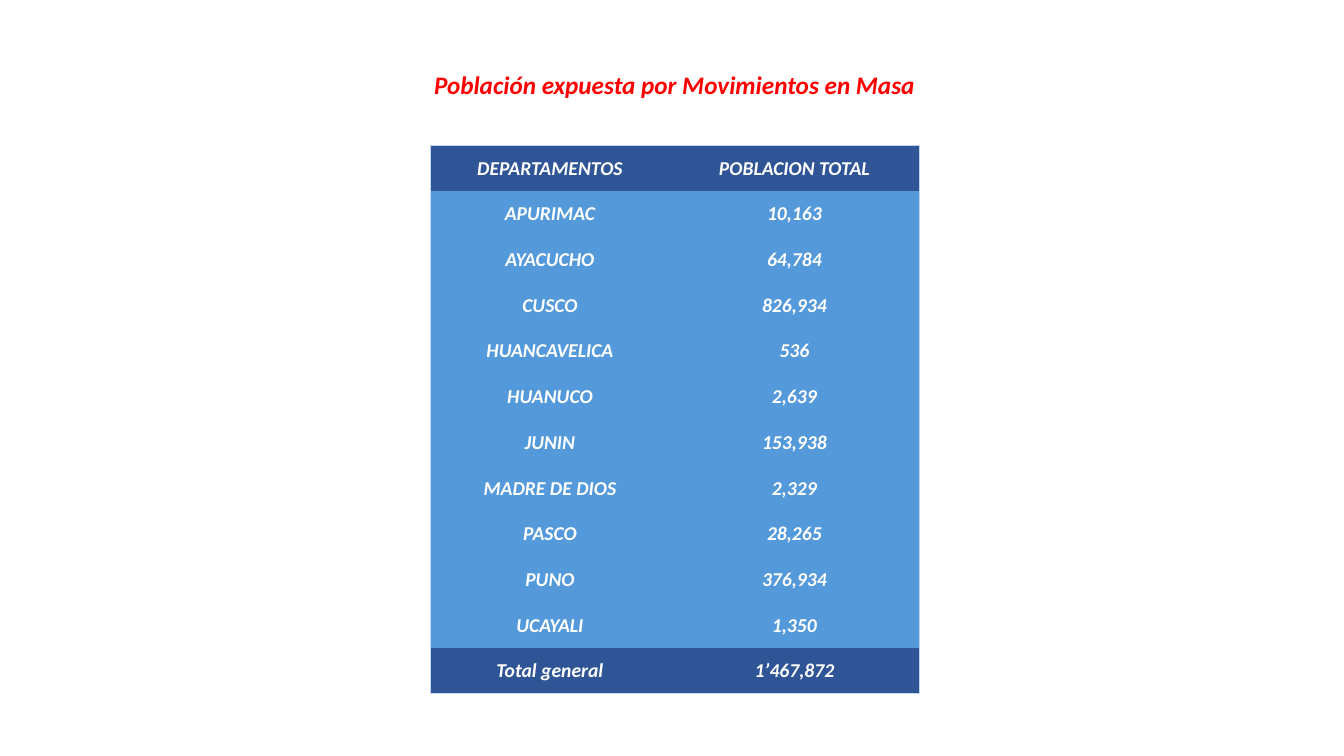
from pptx import Presentation
from pptx.dml.color import RGBColor
from pptx.enum.text import MSO_ANCHOR as Anchor, MSO_AUTO_SIZE as AutoSize, PP_ALIGN as Align
from pptx.oxml import parse_xml
from pptx.oxml.ns import nsdecls
from pptx.util import Emu, Pt

RED = RGBColor(0xFF, 0x00, 0x00)
WHITE = RGBColor(0xFF, 0xFF, 0xFF)
NAVY = RGBColor(0x2F, 0x55, 0x97)
BLUE = RGBColor(0x54, 0x99, 0xDA)
PALE = RGBColor(0xC4, 0xD5, 0xEB)
NO_GRID_STYLE = "{2D5ABB26-0587-4C30-8999-92F81FD0307C}"

ROWS = [
    ("DEPARTAMENTOS", "POBLACION TOTAL"),
    ("APURIMAC", "10,163"),
    ("AYACUCHO", "64,784"),
    ("CUSCO", "826,934"),
    ("HUANCAVELICA", "536"),
    ("HUANUCO", "2,639"),
    ("JUNIN", "153,938"),
    ("MADRE DE DIOS", "2,329"),
    ("PASCO", "28,265"),
    ("PUNO", "376,934"),
    ("UCAYALI", "1,350"),
    ("Total general", "1’467,872"),
]


def px(n):
    return Emu(round(n * 12192000 / 1344))


class Sheet:
    """Draws styled elements on the current slide."""

    def __init__(self, prs, font="Calibri"):
        self.s = prs.slides.add_slide(prs.slide_layouts[6])
        self.font = font

    def add_text(self, tf, text, size, color):
        p = tf.paragraphs[0]
        p.alignment = Align.CENTER
        r = p.add_run()
        r.text = text
        f = r.font
        f.name, f.size, f.bold, f.italic = self.font, Pt(size), True, True
        f.color.rgb = color

    def title(self, text, x, y, w, h):
        tf = self.s.shapes.add_textbox(px(x), px(y), px(w), px(h)).text_frame
        tf.word_wrap = False
        tf.auto_size = AutoSize.SHAPE_TO_FIT_TEXT
        self.add_text(tf, text, 18, RED)

    def border(self, cell, side):
        cell._tc.get_or_add_tcPr().append(parse_xml(
            f'<a:ln{side} {nsdecls("a")} w="{Pt(0.5)}"><a:solidFill>'
            f'<a:srgbClr val="{PALE}"/></a:solidFill></a:ln{side}>'))

    def table(self, rows, x, y, widths, h):
        frame = self.s.shapes.add_table(
            len(rows), len(widths), px(x), px(y), px(sum(widths)), px(h))
        t = frame.table
        t._tbl.tblPr[0].text = NO_GRID_STYLE
        t.horz_banding = False
        for col, w in zip(t.columns, widths):
            col.width = px(w)
        last_row, last_col = len(rows) - 1, len(widths) - 1
        for i, row in enumerate(rows):
            for j, text in enumerate(row):
                cell = t.cell(i, j)
                cell.vertical_anchor = Anchor.MIDDLE
                cell.margin_left = cell.margin_right = cell.margin_top = px(1)
                cell.margin_bottom = 0
                edges = {"L": j == 0, "R": j == last_col, "T": i == 0, "B": i == last_row}
                for side, outer in edges.items():
                    if outer:
                        self.border(cell, side)
                cell.fill.solid()
                cell.fill.fore_color.rgb = NAVY if i in (0, last_row) else BLUE
                self.add_text(cell.text_frame, text, 14, WHITE)


def main():
    prs = Presentation()
    prs.slide_width, prs.slide_height = px(1344), px(756)
    sheet = Sheet(prs)
    sheet.title("Población expuesta por Movimientos en Masa", 421, 64, 507, 40)
    sheet.table(ROWS, 430, 145, (240, 249), 549)
    prs.save("out.pptx")


if __name__ == "__main__":
    main()
